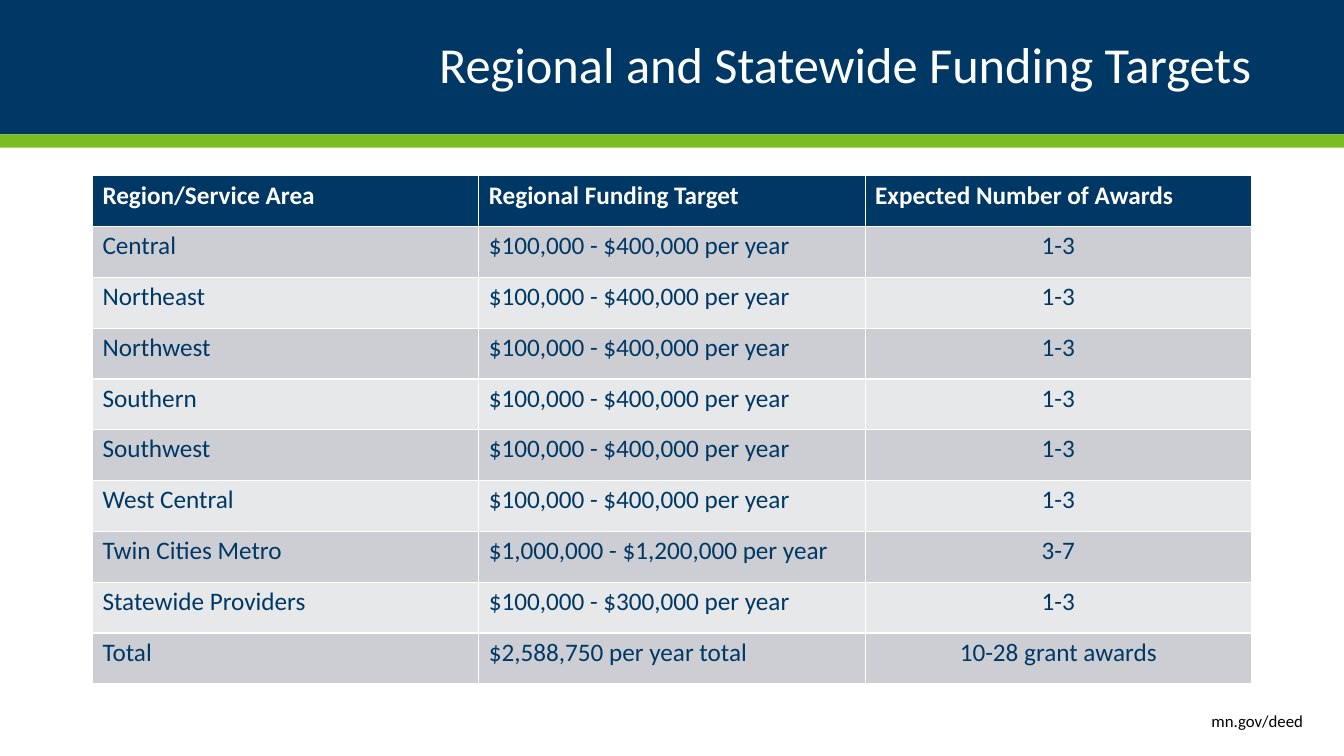
from pptx import Presentation
from pptx import util as u
from pptx.dml.color import RGBColor
from pptx.enum import shapes, text

# Content
TITLE = "Regional and Statewide Funding Targets"
FOOTER = "mn.gov/deed"
HEADER = ("Region/Service Area", "Regional Funding Target", "Expected Number of Awards")
REGIONAL_TARGET = "$100,000 - $400,000 per year"
REGIONS = ("Central", "Northeast", "Northwest", "Southern", "Southwest", "West Central")
ROWS = [
    HEADER,
    *[(region, REGIONAL_TARGET, "1-3") for region in REGIONS],
    ("Twin Cities Metro", "$1,000,000 - $1,200,000 per year", "3-7"),
    ("Statewide Providers", "$100,000 - $300,000 per year", "1-3"),
    ("Total", "$2,588,750 per year total", "10-28 grant awards"),
]

COLORS = {
    "navy": "003865",
    "green": "78BE21",
    "dark_band": "CCCED3",
    "light_band": "E7E8EA",
    "white": "FFFFFF",
    "black": "000000",
}
FONT = "Calibri"

# Layout
SLIDE_WIDTH, SLIDE_HEIGHT = u.Cm(33.87), u.Cm(19.05)
BANNER_HEIGHT, STRIPE_HEIGHT = u.Cm(3.39), u.Cm(0.33)
MARGIN, CONTENT_WIDTH = u.Cm(2.33), u.Cm(29.21)
TABLE_TOP, ROW_HEIGHT = u.Cm(4.43), u.Cm(1.28)


def color(name):
    return RGBColor.from_string(COLORS[name])


def write(frame, content, size=18, fill="navy", bold=False, align=text.PP_ALIGN.LEFT,
          spacing=None):
    paragraph = frame.paragraphs[0]
    paragraph.alignment = align
    if spacing is not None:
        paragraph.line_spacing = spacing
    run = paragraph.add_run()
    run.text = content
    run.font.name = FONT
    run.font.size = u.Pt(size)
    run.font.bold = bold
    run.font.color.rgb = color(fill)


def add_bar(slide, top, height, fill):
    bar = slide.shapes.add_shape(shapes.MSO_SHAPE.RECTANGLE, 0, top, SLIDE_WIDTH, height)
    bar.shadow.inherit = False
    bar.fill.solid()
    bar.fill.fore_color.rgb = color(fill)
    bar.line.fill.background()


def add_label(slide, box, content, **style):
    frame = slide.shapes.add_textbox(*box).text_frame
    frame.word_wrap = True
    frame.vertical_anchor = text.MSO_ANCHOR.MIDDLE
    write(frame, content, align=text.PP_ALIGN.RIGHT, **style)
    return frame


def add_funding_table(slide):
    column_count = len(HEADER)
    table = slide.shapes.add_table(len(ROWS), column_count, MARGIN, TABLE_TOP,
                                   CONTENT_WIDTH, ROW_HEIGHT * len(ROWS)).table
    for column in table.columns:
        column.width = CONTENT_WIDTH // column_count
    for row_index, values in enumerate(ROWS):
        table.rows[row_index].height = ROW_HEIGHT
        is_header = row_index == 0
        band = "navy" if is_header else ("light_band", "dark_band")[row_index % 2]
        for column_index, value in enumerate(values):
            cell = table.cell(row_index, column_index)
            cell.fill.solid()
            cell.fill.fore_color.rgb = color(band)
            if is_header:
                write(cell.text_frame, value, fill="white", bold=True)
                continue
            cell.vertical_anchor = text.MSO_ANCHOR.MIDDLE
            is_last = column_index == column_count - 1
            write(cell.text_frame, value, spacing=u.Pt(13.5),
                  align=text.PP_ALIGN.CENTER if is_last else text.PP_ALIGN.LEFT)


def main():
    presentation = Presentation()
    presentation.slide_width, presentation.slide_height = SLIDE_WIDTH, SLIDE_HEIGHT
    slide = presentation.slides.add_slide(presentation.slide_layouts[6])

    # Banner and title
    add_bar(slide, 0, BANNER_HEIGHT, "navy")
    add_bar(slide, BANNER_HEIGHT, STRIPE_HEIGHT, "green")
    title = add_label(slide, (MARGIN, 0, CONTENT_WIDTH, BANNER_HEIGHT), TITLE,
                      size=36, fill="white", spacing=0.9)
    title.margin_left = title.margin_right = 0

    # Funding table
    add_funding_table(slide)

    # Footer
    add_label(slide, (u.Cm(17.57), u.Cm(17.65), u.Cm(15.52), u.Cm(1.02)), FOOTER,
              size=12, fill="black")

    presentation.save("out.pptx")


if __name__ == "__main__":
    main()
